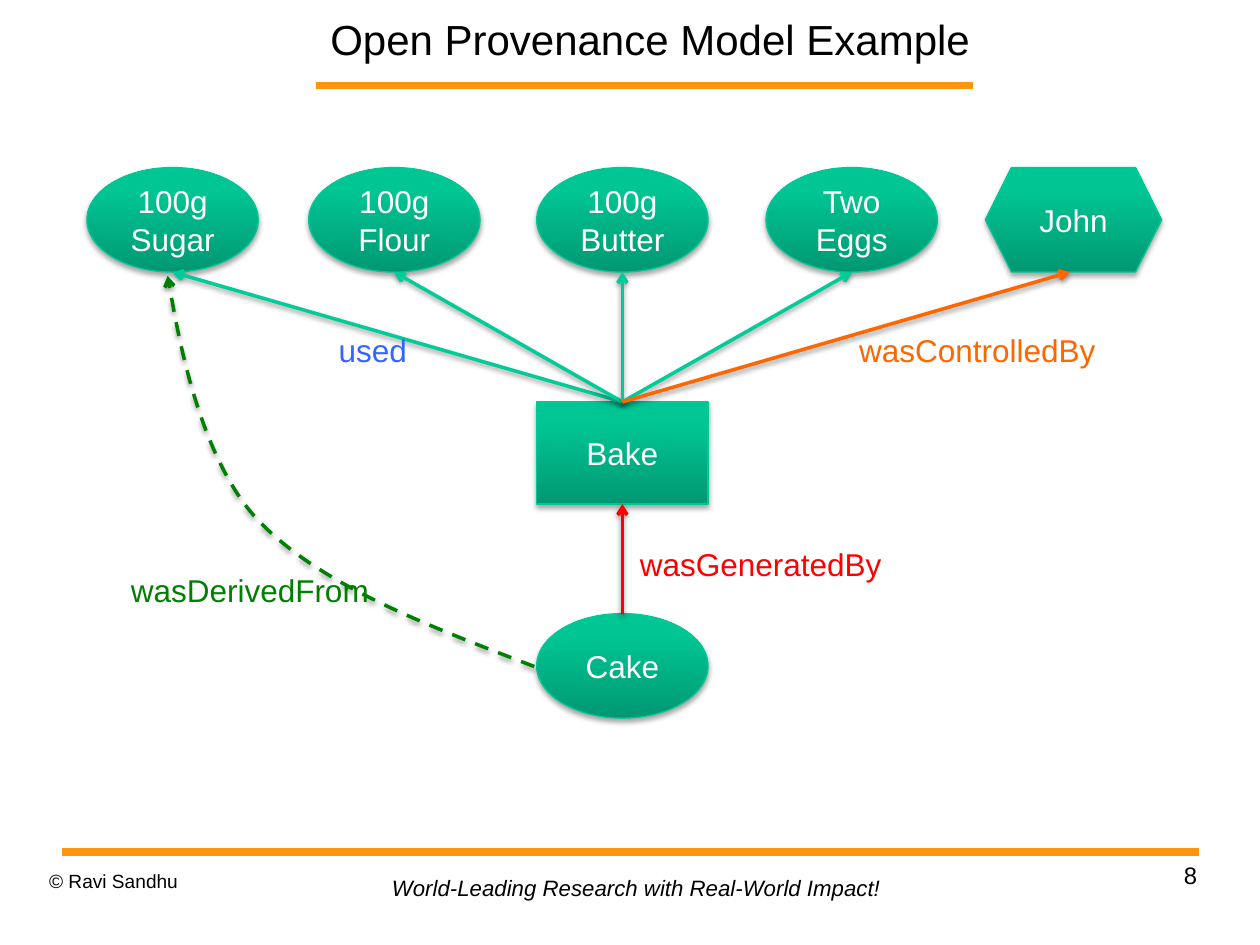
import dataclasses

import lxml.etree
import pptx
import pptx.dml.color
import pptx.enum.dml
import pptx.enum.shapes
import pptx.enum.text
import pptx.oxml
import pptx.oxml.ns
import pptx.util

Inches = pptx.util.Inches
Pt = pptx.util.Pt
qn = pptx.oxml.ns.qn
ALIGN = pptx.enum.text.PP_ALIGN
ANCHOR = pptx.enum.text.MSO_ANCHOR
SHAPE = pptx.enum.shapes.MSO_SHAPE


@dataclasses.dataclass(frozen=True)
class Theme:
    font: str = "Arial"
    text: str = "000000"
    node_text: str = "FFFFFF"
    rule: str = "FF950E"
    node_line: str = "00C896"
    node_stops: tuple = ((0, "009872"), (80, "00C694"), (100, "00C795"))
    used_arrow: str = "00CC99"
    used_label: str = "3366FF"
    controlled: str = "FF6600"
    generated: str = "FF0000"
    derived: str = "008000"
    title_size: float = 24
    body_size: float = 18
    number_size: float = 13.6
    motto_size: float = 12.7
    copyright_size: float = 10.9


THEME = Theme()


def rgb(value):
    return pptx.dml.color.RGBColor.from_string(value)


def write_text(shape, text, size=THEME.body_size, color=THEME.text, italic=False,
               align=ALIGN.LEFT, anchor=ANCHOR.TOP, margins=(0.1, 0.05),
               wrap=True, spacing=None):
    """Fill a shape with text, one paragraph for each line."""
    frame = shape.text_frame
    frame.text = text
    frame.word_wrap = wrap
    frame.auto_size = pptx.enum.text.MSO_AUTO_SIZE.NONE
    frame.vertical_anchor = anchor
    frame.margin_left = frame.margin_right = Inches(margins[0])
    frame.margin_top = frame.margin_bottom = Inches(margins[1])
    for paragraph in frame.paragraphs:
        paragraph.alignment = align
        paragraph.line_spacing = spacing
        font = paragraph.font
        font.name = THEME.font
        font.size = Pt(size)
        font.italic = italic
        font.color.rgb = rgb(color)


def add_text(slide, left, top, width, height, text, **text_format):
    box = slide.shapes.add_textbox(Inches(left), Inches(top), Inches(width), Inches(height))
    write_text(box, text, **text_format)


def add_effects(shape, alpha=None, distance=1.6):
    """Add a soft shadow below the shape, or no effect when alpha is None."""
    effects = lxml.etree.SubElement(shape._element.spPr, qn("a:effectLst"))
    if alpha is None:
        return
    shadow = lxml.etree.SubElement(
        effects, qn("a:outerShdw"), blurRad=str(Pt(3.1)), dist=str(Pt(distance)),
        dir="5400000", rotWithShape="0")
    color = lxml.etree.SubElement(shadow, qn("a:srgbClr"), val="000000")
    lxml.etree.SubElement(color, qn("a:alpha"), val=str(alpha * 1000))


def set_line(shape, color, width):
    shape.line.color.rgb = rgb(color)
    shape.line.width = Pt(width)


def add_arrowhead(shape):
    lxml.etree.SubElement(shape.line._get_or_add_ln(), qn("a:tailEnd"), type="arrow")


def add_line(slide, start, end, color, width):
    points = [Inches(value) for value in (*start, *end)]
    line = slide.shapes.add_connector(pptx.enum.shapes.MSO_CONNECTOR.STRAIGHT, *points)
    set_line(line, color, width)
    return line


def add_rule(slide, left, top, width):
    add_effects(add_line(slide, (left, top), (left + width, top), THEME.rule, 4.31))


def add_arrow(slide, start, end, color):
    arrow = add_line(slide, start, end, color, 2)
    add_arrowhead(arrow)
    add_effects(arrow, alpha=38)


def add_curve(slide, points, color):
    """Draw a dashed arrow through cubic segments: a start, then three points each."""
    (start_x, start_y), *rest = [(Inches(x), Inches(y)) for x, y in points]
    builder = slide.shapes.build_freeform(start_x, start_y)
    builder.add_line_segments(rest, close=False)
    curve = builder.convert_to_shape()
    # Group each three straight steps into one cubic step
    outline = next(curve._element.iter(qn("a:path")))
    steps = outline.findall(qn("a:lnTo"))
    for first in range(0, len(steps), 3):
        cubic = lxml.etree.SubElement(outline, qn("a:cubicBezTo"))
        for step in steps[first:first + 3]:
            cubic.append(step[0])
            outline.remove(step)
    curve.fill.background()
    set_line(curve, color, 2)
    curve.line.dash_style = pptx.enum.dml.MSO_LINE.DASH
    add_arrowhead(curve)
    add_effects(curve, alpha=38)


def add_node(slide, kind, left, top, width, height, text):
    node = slide.shapes.add_shape(kind, Inches(left), Inches(top), Inches(width), Inches(height))
    node.fill.gradient()
    node.fill.gradient_angle = 90
    stops = node._element.spPr.find(qn("a:gradFill")).find(qn("a:gsLst"))
    for stop in list(stops):
        stops.remove(stop)
    for position, color in THEME.node_stops:
        stop = lxml.etree.SubElement(stops, qn("a:gs"), pos=str(position * 1000))
        lxml.etree.SubElement(stop, qn("a:srgbClr"), val=color)
    set_line(node, THEME.node_line, 0.75)
    add_effects(node, alpha=35, distance=1.8)
    write_text(node, text, color=THEME.node_text, align=ALIGN.CENTER, anchor=ANCHOR.MIDDLE)


def add_header(slide, left, top, width):
    """Title with the rule below it."""
    title = slide.shapes.title
    title.left, title.top = Inches(left + 0.07), Inches(top)
    title.width, title.height = Inches(width - 0.05), Inches(0.51)
    write_text(title, "Open Provenance Model Example", size=THEME.title_size,
               align=ALIGN.CENTER, anchor=ANCHOR.MIDDLE, margins=(0, 0))
    add_rule(slide, left, top + 0.63, width)


def add_footer(slide, left, top, width):
    """Rule, copyright line, motto and slide number."""
    add_rule(slide, left, top, width)
    add_text(slide, left + width - 2.35, top + 0.07, 2.33, 0.52, "8", size=THEME.number_size,
             align=ALIGN.RIGHT, margins=(0, 0), spacing=1.01)
    add_text(slide, left - 0.1, top + 0.14, 2.33, 0.39, "© Ravi Sandhu",
             size=THEME.copyright_size, margins=(0, 0), spacing=1.01)
    add_text(slide, left + 2.54, top + 0.14, 4.09, 0.3,
             "World-Leading Research with Real-World Impact!", size=THEME.motto_size,
             italic=True, margins=(0.08, 0.04), wrap=False)


def add_diagram(slide, left, top):
    """Ingredients and agent on top, process in the middle, product below."""
    width, height = 1.36, 0.83
    center = left + 4.25
    middle_left = center - width / 2
    bake_top, bake_height, cake_top = top + 1.86, 0.81, top + 3.54
    ingredients = ((0, "100g Sugar"), (1.76, "100g\nFlour"),
                   (3.57, "100g\nButter"), (5.39, "Two\nEggs"))

    # Nodes
    add_node(slide, SHAPE.OVAL, middle_left, cake_top, width, height, "Cake")
    for offset, text in ingredients:
        add_node(slide, SHAPE.OVAL, left + offset, top, width, height, text)
    add_node(slide, SHAPE.HEXAGON, left + 7.13, top, 1.4, height, "John")
    add_node(slide, SHAPE.RECTANGLE, middle_left, bake_top, width, bake_height, "Bake")

    # Arrows
    add_arrow(slide, (center, cake_top), (center, bake_top + bake_height), THEME.generated)
    for offset, _ in ingredients:
        add_arrow(slide, (center, bake_top), (left + offset + width / 2, top + height),
                  THEME.used_arrow)
    add_arrow(slide, (center, bake_top), (left + 7.8, top + height), THEME.controlled)
    curve = ((3.55, 3.96), (2.69, 3.63), (1.84, 3.31), (1.35, 2.79),
             (0.87, 2.27), (0.64, 0.86), (0.64, 0.86))
    add_curve(slide, [(left + x, top + y) for x, y in curve], THEME.derived)

    # Arrow labels
    for x, y, label_width, text, color in (
            (0.25, 3.15, 2.19, "wasDerivedFrom", THEME.derived),
            (4.29, 2.95, 2.19, "wasGeneratedBy", THEME.generated),
            (6.03, 1.25, 2.19, "wasControlledBy", THEME.controlled),
            (1.9, 1.25, 1.1, "used", THEME.used_label)):
        add_text(slide, left + x, top + y, label_width, 0.4, text, color=color)


def main():
    presentation = pptx.Presentation()
    presentation.slide_width, presentation.slide_height = Inches(10), Inches(7.5)
    slide = presentation.slides.add_slide(presentation.slide_layouts[5])
    add_header(slide, 2.51, 0.05, 5.21)
    add_footer(slide, 0.49, 6.76, 9.03)
    add_diagram(slide, 0.69, 1.33)
    presentation.save("out.pptx")


if __name__ == "__main__":
    main()
